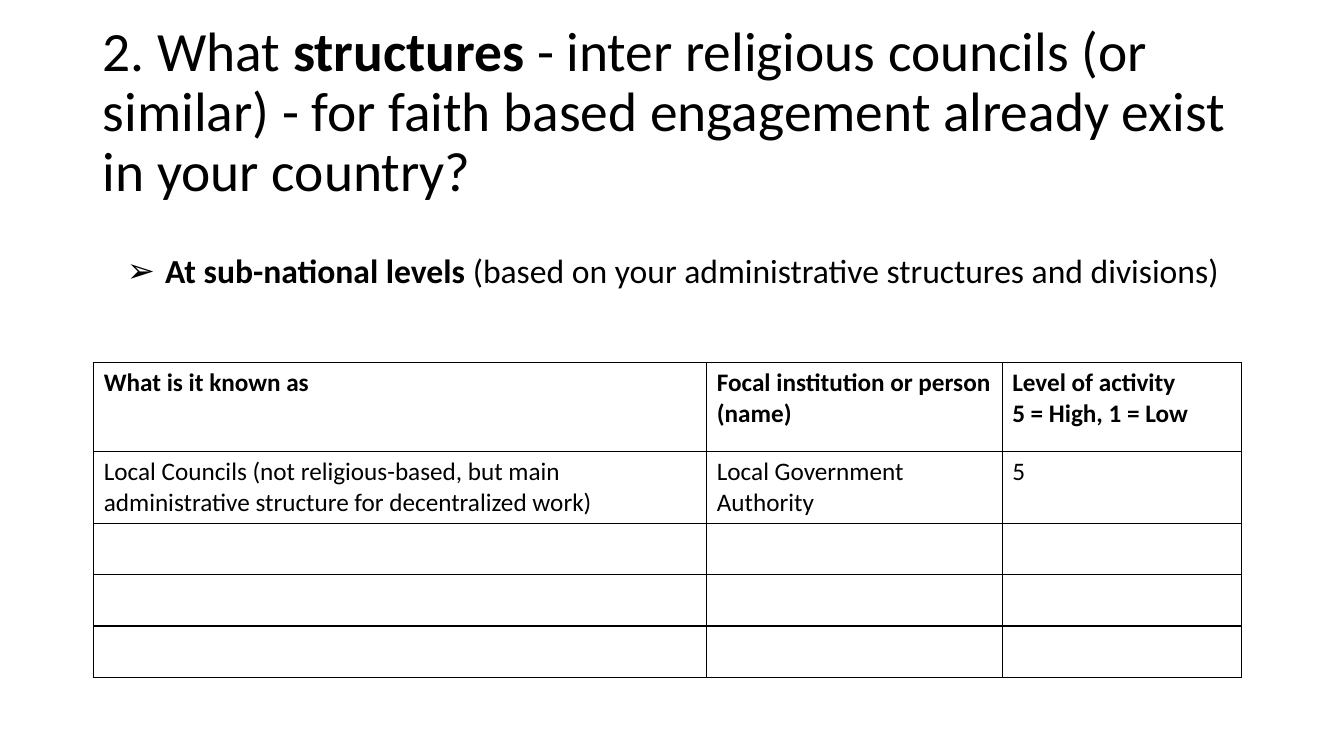
import pptx
import pptx.util
import pptx.dml.color
import pptx.enum.text
import pptx.oxml
import pptx.oxml.ns
import lxml.etree

Inches = pptx.util.Inches
Pt = pptx.util.Pt
qn = pptx.oxml.ns.qn

FONT = "Calibri"
BLACK = "000000"
WHITE = "FFFFFF"

TITLE = [[
    ("2. What ", False),
    ("structures", True),
    (" - inter religious councils (or similar) - for faith based engagement already exist in your country?", False),
]]
POINT = [[
    ("At sub-national levels", True),
    (" (based on your administrative structures and divisions)", False),
]]
HEADS = [
    ["What is it known as"],
    ["Focal institution or person (name)"],
    ["Level of activity", "5 = High, 1 = Low"],
]
COUNCIL = [
    ["Local Councils (not religious-based, but main administrative structure for decentralized work)"],
    ["Local Government Authority"],
    ["5"],
]
BLANKS = 3
COLS = [6.08, 2.93, 2.37]
ROWS = [0.88, 0.71] + [0.51] * BLANKS
LEFT, WIDTH = 0.92, 11.5


def color(code):
    return pptx.dml.color.RGBColor.from_string(code)


def write(frame, paras, size, space=1.0, before=0, anchor="TOP"):
    frame.word_wrap = True
    frame.vertical_anchor = getattr(pptx.enum.text.MSO_ANCHOR, anchor)
    for i, runs in enumerate(paras):
        para = frame.paragraphs[0] if i == 0 else frame.add_paragraph()
        para.alignment = pptx.enum.text.PP_ALIGN.LEFT
        para.line_spacing = space
        para.space_before = Pt(before)
        for text, bold in runs:
            run = para.add_run()
            run.text = text
            run.font.name = FONT
            run.font.size = Pt(size)
            run.font.bold = bold
            run.font.color.rgb = color(BLACK)


def place(shape, left, top, width, height):
    shape.left, shape.top = Inches(left), Inches(top)
    shape.width, shape.height = Inches(width), Inches(height)


def bullet(para, mark, left, indent):
    props = para._p.get_or_add_pPr()
    props.set("marL", str(Inches(left)))
    props.set("indent", str(Inches(indent)))
    lxml.etree.SubElement(props, qn("a:buFont")).set("typeface", "Arial")
    lxml.etree.SubElement(props, qn("a:buChar")).set("char", mark)


def border(cell, width):
    props = cell._tc.get_or_add_tcPr()
    for i, side in enumerate(("L", "R", "T", "B")):
        line = lxml.etree.Element(qn("a:ln" + side), w=str(Pt(width)))
        fill = lxml.etree.SubElement(line, qn("a:solidFill"))
        lxml.etree.SubElement(fill, qn("a:srgbClr")).set("val", BLACK)
        props.insert(i, line)


def add_grid(slide):
    grid = slide.shapes.add_table(
        len(ROWS), len(COLS), Inches(0.93), Inches(3.6),
        Inches(sum(COLS)), Inches(sum(ROWS))).table
    grid.first_row = False
    grid.horz_banding = False
    for col, width in zip(grid.columns, COLS):
        col.width = Inches(width)
    for row, height in zip(grid.rows, ROWS):
        row.height = Inches(height)
    for cell in grid.iter_cells():
        cell.fill.solid()
        cell.fill.fore_color.rgb = color(WHITE)
        border(cell, 1)
    for r, (texts, bold) in enumerate([(HEADS, True), (COUNCIL, False)]):
        for c, lines in enumerate(texts):
            write(grid.cell(r, c).text_frame, [[(line, bold)] for line in lines], 18)


def main():
    deck = pptx.Presentation()
    deck.slide_width, deck.slide_height = Inches(13.33), Inches(7.5)
    slide = deck.slides.add_slide(deck.slide_layouts[5])

    title = slide.shapes.title
    place(title, LEFT, 0.4, WIDTH, 1.45)
    title.text_frame.auto_size = pptx.enum.text.MSO_AUTO_SIZE.NONE
    write(title.text_frame, TITLE, 39.6, space=0.9, anchor="MIDDLE")

    point = slide.shapes.add_textbox(0, 0, 0, 0)
    place(point, LEFT, 2.48, WIDTH, 0.61)
    write(point.text_frame, POINT, 24, space=0.9, before=5)
    bullet(point.text_frame.paragraphs[0], "➢", 0.62, -0.38)

    add_grid(slide)
    deck.save("out.pptx")


if __name__ == "__main__":
    main()
